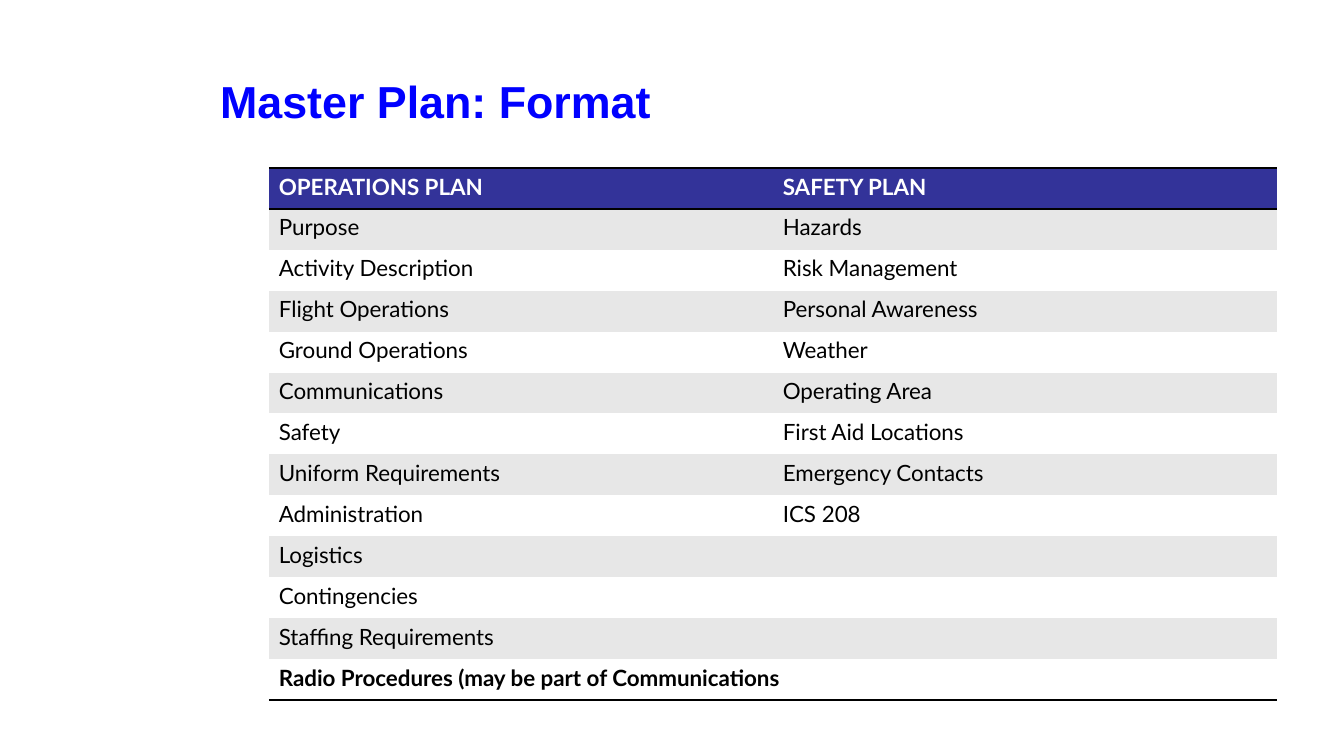
from itertools import zip_longest

from lxml import etree
from pptx import Presentation
from pptx.dml.color import RGBColor
from pptx.enum.text import MSO_ANCHOR, PP_ALIGN
from pptx.oxml.ns import qn
from pptx.util import Pt

PX = 9525
LEFT = PP_ALIGN.LEFT
MIDDLE = MSO_ANCHOR.MIDDLE

BLUE = RGBColor(0x00, 0x00, 0xFF)
INDIGO = RGBColor(0x33, 0x33, 0x99)
GRAY = RGBColor(0xE7, 0xE7, 0xE7)
WHITE = RGBColor(0xFF, 0xFF, 0xFF)
BLACK = RGBColor(0x00, 0x00, 0x00)

NO_STYLE_NO_GRID = "{2D5ABB26-0587-4C30-8999-92F81FD0307C}"
ROW_HEIGHT = 39

OPERATIONS = [
    "OPERATIONS PLAN", "Purpose", "Activity Description", "Flight Operations",
    "Ground Operations", "Communications", "Safety", "Uniform Requirements",
    "Administration", "Logistics", "Contingencies", "Staffing Requirements",
    "Radio Procedures (may be part of Communications",
]
SAFETY = [
    "SAFETY PLAN", "Hazards", "Risk Management", "Personal Awareness", "Weather",
    "Operating Area", "First Aid Locations", "Emergency Contacts", "ICS 208",
]


class SlideBuilder:
    title_font = "Arial"
    table_font = "Lato"

    def __init__(self, deck):
        self.slide = deck.slides.add_slide(deck.slide_layouts[5])

    def add_text(self, para, text, font, size, color, bold):
        span = para.add_run()
        span.text = text
        span.font.name = font
        span.font.size = Pt(size)
        span.font.color.rgb = color
        span.font.bold = bold

    def title(self, text, left, top, width, height):
        box = self.slide.shapes.title
        box.left, box.top = left * PX, top * PX
        box.width, box.height = width * PX, height * PX
        box.text_frame.vertical_anchor = MIDDLE
        para = box.text_frame.paragraphs[0]
        para.alignment = LEFT
        self.add_text(para, text, self.title_font, 32, BLUE, True)

    def rule(self, cell, side):
        """Draw a black border on one side of a cell: lnT or lnB."""
        properties = cell._tc.get_or_add_tcPr()
        line = etree.SubElement(properties, qn(f"a:{side}"), w=str(Pt(2)))
        fill = etree.SubElement(line, qn("a:solidFill"))
        etree.SubElement(fill, qn("a:srgbClr"), val=str(BLACK))

    def table(self, rows, left, top, width):
        """Build a banded table whose last row spans every column."""
        last = len(rows) - 1
        frame = self.slide.shapes.add_table(
            len(rows), len(rows[0]), left * PX, top * PX,
            width * PX, len(rows) * ROW_HEIGHT * PX)
        table = frame.table
        table._tbl.tblPr.find(qn("a:tableStyleId")).text = NO_STYLE_NO_GRID
        for r, texts in enumerate(rows):
            for c, text in enumerate(texts):
                cell = table.cell(r, c)
                if r == 0:
                    self.rule(cell, "lnT")
                if r in (0, last):
                    self.rule(cell, "lnB")
                cell.fill.solid()
                band = GRAY if r % 2 else WHITE
                cell.fill.fore_color.rgb = band if r else INDIGO
                if text:
                    self.add_text(cell.text_frame.paragraphs[0], text, self.table_font,
                                  16, BLACK if r else WHITE, r in (0, last))
        table.cell(last, 0).merge(table.cell(last, len(rows[0]) - 1))


def main():
    deck = Presentation()
    deck.slide_width, deck.slide_height = 1280 * PX, 720 * PX
    page = SlideBuilder(deck)
    page.title("Master Plan: Format", 200, 64, 1016, 64)
    page.table(list(zip_longest(OPERATIONS, SAFETY, fillvalue="")), 256, 160, 960)
    deck.save("out.pptx")


if __name__ == "__main__":
    main()
